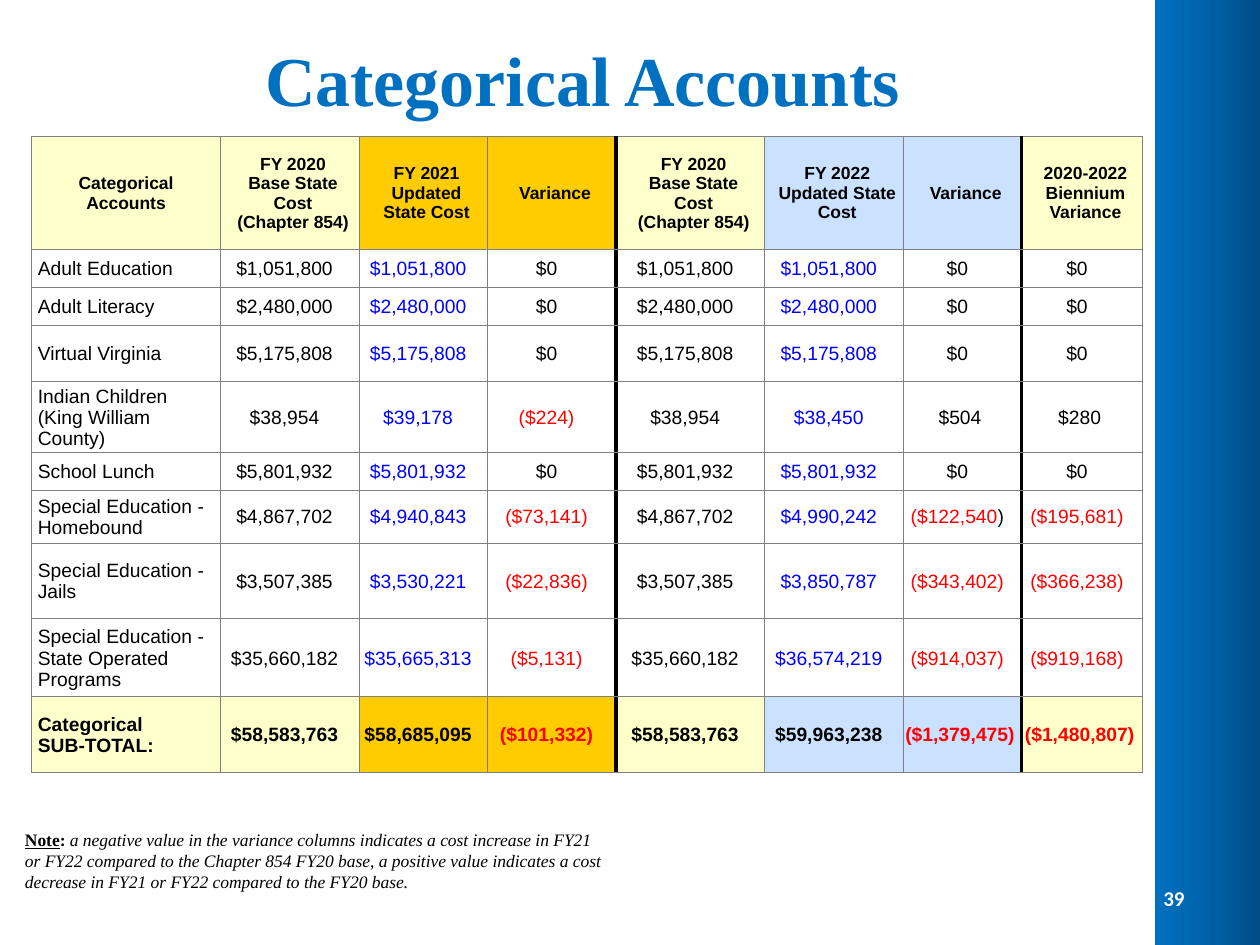
from copy import deepcopy
from lxml import etree
from pptx import Presentation
from pptx import util as u
from pptx.dml import color as dye
from pptx.enum import shapes, text
from pptx.oxml import ns

HUES = {
    "black": "000000", "white": "FFFFFF", "gray": "808080", "red": "FF0000",
    "blue": "0000FF", "title": "0070C0", "mid": "005EA2", "dark": "004272",
    "cream": "FFFFCC", "gold": "FFCC00", "sky": "CAE2FF",
}
COLS = [1.5, 1.1, 1.02, 1.02, 1.18, 1.1, 0.94, 0.96]
ROWS = [0.9, 0.3, 0.3, 0.45, 0.4, 0.3, 0.42, 0.6, 0.62, 0.6]
FILLS = ["cream", "cream", "gold", "gold", "cream", "sky", "sky", "cream"]
BASE = "FY 2020\nBase State Cost\n(Chapter 854)"
HEADS = ["Categorical Accounts", BASE, "FY 2021\nUpdated State Cost", "Variance",
         BASE, "FY 2022 Updated State Cost", "Variance", "2020-2022 Biennium Variance"]
BODY = [
    ["Adult Education", "$1,051,800 ", "$1,051,800 ", "$0 ", "$1,051,800 ", "$0 ", "$0 "],
    ["Adult Literacy", "$2,480,000 ", "$2,480,000 ", "$0 ", "$2,480,000 ", "$0 ", "$0 "],
    ["Virtual Virginia", "$5,175,808 ", "$5,175,808 ", "$0 ", "$5,175,808 ", "$0 ", "$0 "],
    ["Indian Children (King William County)", "$38,954 ", "$39,178 ", "($224) ",
     "$38,450 ", "$504", "$280"],
    ["School Lunch", "$5,801,932 ", "$5,801,932 ", "$0 ", "$5,801,932 ", "$0 ", "$0 "],
    ["Special Education - Homebound", "$4,867,702 ", "$4,940,843 ", "($73,141) ",
     "$4,990,242 ", "($122,540|) ", "($195,681) "],
    ["Special Education - Jails", "$3,507,385 ", "$3,530,221 ", "($22,836) ",
     "$3,850,787 ", "($343,402) ", "($366,238) "],
    ["Special Education - State Operated Programs", "$35,660,182 ", "$35,665,313 ",
     "($5,131) ", "$36,574,219 ", "($914,037) ", "($919,168) "],
    ["Categorical\nSUB-TOTAL:", "$58,583,763 ", "$58,685,095 ", "($101,332) ",
     "$59,963,238 ", "($1,379,475) ", "($1,480,807) "],
]
NOTE = ("a negative value in the variance columns indicates a cost increase in FY21 or FY22 "
        "compared to the Chapter 854 FY20 base, a positive value indicates a cost decrease "
        "in FY21 or FY22 compared to the FY20 base.")
HEAD = {"name": "Arial", "size": u.Pt(10), "bold": True}
CELL = {"name": "Arial", "size": u.Pt(11), "bold": False}
TOTAL = CELL | {"bold": True}
SERIF = {"name": "Times New Roman", "size": u.Pt(10)}
MID, LEFT, RIGHT = text.PP_ALIGN.CENTER, text.PP_ALIGN.LEFT, text.PP_ALIGN.RIGHT


def rgb(hue):
    return dye.RGBColor.from_string(HUES[hue])


def add_run(par, words, form, hue):
    for num, line in enumerate(words.split("\n")):
        if num:
            par.add_line_break()
        run = par.add_run()
        run.text = line
        for key, val in form.items():
            setattr(run.font, key, val)
        run.font.color.rgb = rgb(hue)
    for gap in par._p.findall(ns.qn("a:br")):
        gap.append(deepcopy(run.font._rPr))


def add_text(slide, box, runs, align=LEFT, anchor=text.MSO_ANCHOR.TOP):
    frame = slide.shapes.add_textbox(*map(u.Inches, box)).text_frame
    frame.word_wrap = True
    frame.vertical_anchor = anchor
    par = frame.paragraphs[0]
    par.alignment = align
    for words, form, hue in runs:
        add_run(par, words, form, hue)


def add_bar(slide):
    bar = slide.shapes.add_shape(shapes.MSO_SHAPE.RECTANGLE,
                                 *map(u.Inches, (5.92, 3.25, 7.5, 1)))
    bar.rotation = 270
    bar.shadow.inherit = False
    bar.line.fill.background()
    bar.fill.gradient()
    bar.fill.gradient_angle = 90
    stops = bar._element.spPr.find(".//" + ns.qn("a:gsLst"))
    stops.insert(1, deepcopy(stops[0]))
    for stop, pos, hue in zip(bar.fill.gradient_stops, (0, 0.5, 1), ("dark", "mid", "title")):
        stop.position = pos
        stop.color.rgb = rgb(hue)


def add_edge(cell, side, hue, width):
    line = etree.SubElement(cell._tc.get_or_add_tcPr(), ns.qn("a:ln" + side), w=str(u.Pt(width)))
    fill = etree.SubElement(line, ns.qn("a:solidFill"))
    etree.SubElement(fill, ns.qn("a:srgbClr"), val=HUES[hue])


def set_cell(cell, words, row, col):
    top, last = row == 0, row == len(BODY)
    for side in "LRTB":
        bold = (side == "R" and col in (3, 6)) or (side == "L" and col in (4, 7))
        add_edge(cell, side, *(("black", 2.25) if bold else ("gray", 0.5)))
    if top or last:
        cell.fill.solid()
        cell.fill.fore_color.rgb = rgb(FILLS[col])
    else:
        cell.fill.background()
    inset = 0.05 if col == 0 else 0.1 if top else 0.01
    form = {"margin_left": u.Inches(inset), "margin_top": u.Inches(0.01),
            "margin_right": u.Inches(0.05), "margin_bottom": 0,
            "vertical_anchor": text.MSO_ANCHOR.MIDDLE}
    for key, val in form.items():
        setattr(cell, key, val)
    par = cell.text_frame.paragraphs[0]
    par.alignment = MID if top or col else LEFT
    font = HEAD if top else TOTAL if last else CELL
    for part in words.split("|"):
        hue = "black"
        if not top and part.startswith("("):
            hue = "red"
        elif not top and not last and col in (2, 5):
            hue = "blue"
        add_run(par, part, font, hue)


def add_grid(slide):
    rows = [HEADS] + [line[:4] + line[1:2] + line[4:] for line in BODY]
    box = (0.25, 1.08, sum(COLS), sum(ROWS))
    grid = slide.shapes.add_table(len(ROWS), len(COLS), *map(u.Inches, box)).table
    grid.first_row = grid.horz_banding = False
    for col, width in zip(grid.columns, COLS):
        col.width = u.Inches(width)
    for row, high in zip(grid.rows, ROWS):
        row.height = u.Inches(high)
    for row, line in enumerate(rows):
        for col, words in enumerate(line):
            set_cell(grid.cell(row, col), words, row, col)


def main():
    deck = Presentation()
    deck.slide_width, deck.slide_height = u.Inches(10), u.Inches(7.5)
    slide = deck.slides.add_slide(deck.slide_layouts[6])
    mid = text.MSO_ANCHOR.MIDDLE
    add_bar(slide)
    page = {"name": "Calibri", "size": u.Pt(12), "bold": True}
    add_text(slide, (9.08, 6.93, 0.42, 0.4), [("39", page, "white")], RIGHT, mid)
    add_text(slide, (0.1, 6.53, 4.84, 0.61), [
        ("Note", SERIF | {"bold": True, "underline": True}, "black"),
        (": ", SERIF | {"bold": True}, "black"),
        (NOTE, SERIF | {"italic": True}, "black")])
    add_grid(slide)
    big = SERIF | {"size": u.Pt(40), "bold": True}
    add_text(slide, (0.5, 0, 8.25, 1.25), [("Categorical Accounts", big, "title")], MID, mid)
    deck.save("out.pptx")


if __name__ == "__main__":
    main()
